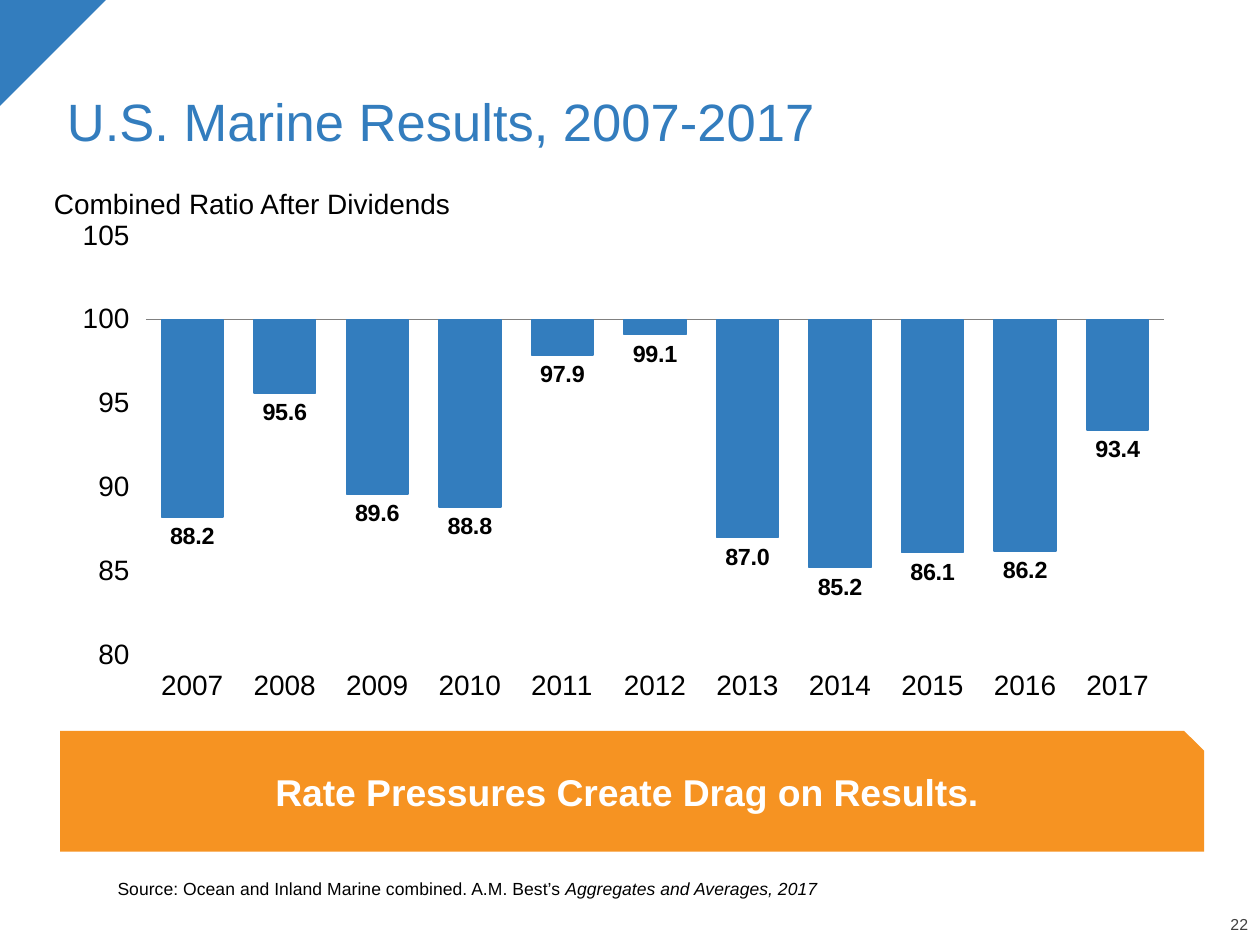
from dataclasses import dataclass

from lxml.etree import SubElement
from pptx import Presentation
from pptx.chart.data import CategoryChartData as Data
from pptx.dml.color import RGBColor
from pptx.enum.chart import XL_CHART_TYPE as Kind, XL_LABEL_POSITION as Spot
from pptx.enum.chart import XL_TICK_LABEL_POSITION as Place, XL_TICK_MARK as Tick
from pptx.enum.shapes import MSO_SHAPE as Form
from pptx.enum.text import MSO_ANCHOR as Anchor, PP_ALIGN as Align
from pptx.oxml.ns import qn
from pptx.util import Inches, Length, Pt

FONT = "Arial"
COLS, ROWS = 75, 56.25
CELL = Inches(0.1)
HUES = {"blue": "337DBE", "orange": "F69322", "black": "000000",
        "white": "FFFFFF", "grey": "404040", "axis": "808080"}
RATIOS = [88.2, 95.6, 89.6, 88.8, 97.9, 99.1, 87, 85.2, 86.1, 86.2, 93.4]
YEARS = [str(2007 + i) for i in range(len(RATIOS))]
PLOT = {"x": 8.7, "y": 6, "w": 89.5, "h": 77.8}


@dataclass(frozen=True)
class Box:
    col: float
    row: float
    wide: float
    high: float

    def place(self) -> list[Length]:
        return [Length(round(n * CELL)) for n in (self.col, self.row, self.wide, self.high)]


@dataclass(frozen=True)
class Label:
    box: Box
    text: str
    size: float
    hue: str = "black"
    tail: str = ""
    bold: bool = False
    align: Align = Align.LEFT
    anchor: Anchor = Anchor.TOP
    inset: tuple = (0.1, 0.05, 0.1, 0.05)
    lead: float = 0.9


@dataclass(frozen=True)
class Panel:
    box: Box
    form: Form
    hue: str
    turn: float = 0


CORNER = Panel(Box(0, 0, 6.3, 6.3), Form.RIGHT_TRIANGLE, "blue", 90)
BANNER = Panel(Box(3.58, 43.5, 68.1, 7.2), Form.SNIP_1_RECTANGLE, "orange")
CHART = Box(2.8, 12.1, 67.7, 32.1)
FLAT = (0, 0, 0, 0)
LABELS = [
    Label(Box(70.7, 54.6, 3.6, 1), "22", 6.8, "grey", align=Align.RIGHT,
          anchor=Anchor.BOTTOM, inset=FLAT),
    Label(Box(3, 1.8, 71, 7.8), "U.S. Marine Results, 2007-2017", 22.5, "blue",
          anchor=Anchor.BOTTOM),
    Label(Box(2.23, 10.84, 26.7, 4.1), "Combined Ratio After Dividends", 12),
    Label(Box(7, 51.3, 63, 3.4),
          "Source: Ocean and Inland Marine combined. A.M. Best’s ", 7.5,
          tail="Aggregates and Averages, 2017", anchor=Anchor.MIDDLE, inset=FLAT),
]
CLAIM = Label(BANNER.box, "Rate Pressures Create Drag on Results.", 16, "white",
              bold=True, align=Align.CENTER, anchor=Anchor.MIDDLE,
              inset=(0.07, 0.04, 0.07, 0.07), lead=0.95)


def tint(hue: str) -> RGBColor:
    return RGBColor.from_string(HUES[hue])


def style(font, size: float, hue: str = "black", bold: bool = False) -> None:
    font.name, font.size, font.bold = FONT, Pt(size), bold
    font.color.rgb = tint(hue)


def write(frame, label: Label) -> None:
    frame.word_wrap = True
    frame.vertical_anchor = label.anchor
    (frame.margin_left, frame.margin_top,
     frame.margin_right, frame.margin_bottom) = map(Inches, label.inset)
    frame.text = label.text
    para = frame.paragraphs[0]
    para.alignment, para.line_spacing = label.align, label.lead
    if label.tail:
        run = para.add_run()
        run.text = label.tail
        run.font.italic = True
    for run in para.runs:
        style(run.font, label.size, label.hue, label.bold)


def draw(shapes, panel: Panel):
    shape = shapes.add_shape(panel.form, *panel.box.place())
    shape.shadow.inherit = False
    shape.rotation = panel.turn
    shape.fill.solid()
    shape.fill.fore_color.rgb = tint(panel.hue)
    shape.line.fill.background()
    return shape


def frame_plot(chart) -> None:
    area = chart.plots[0]._element.getparent()
    layout = area.find(qn("c:layout"))
    if layout is None:
        layout = SubElement(area, qn("c:layout"))
        area.insert(0, layout)
    manual = SubElement(layout, qn("c:manualLayout"))
    shares = {tag: round(part / 100, 3) for tag, part in PLOT.items()}
    rules = {"layoutTarget": "inner", "xMode": "edge", "yMode": "edge", **shares}
    for tag, val in rules.items():
        SubElement(manual, qn(f"c:{tag}")).set("val", str(val))


def graph(shapes) -> None:
    data = Data(number_format="0.0")
    data.categories = YEARS
    data.add_series("Series 1", RATIOS)
    chart = shapes.add_chart(Kind.COLUMN_CLUSTERED, *CHART.place(), data).chart
    chart.has_legend = chart.has_title = False
    style(chart.font, 14)
    frame_plot(chart)

    years, scale = chart.category_axis, chart.value_axis
    for axis in (years, scale):
        axis.has_major_gridlines = False
        axis.minor_tick_mark = Tick.NONE
        style(axis.tick_labels.font, 12)
    years.major_tick_mark = Tick.NONE
    years.tick_label_position = Place.LOW
    years.format.line.color.rgb = tint("axis")
    years.format.line.width = Pt(0.75)
    scale.major_tick_mark = Tick.OUTSIDE
    scale.minimum_scale, scale.maximum_scale, scale.major_unit = 80, 105, 5
    scale.crosses_at = 100
    scale.format.line.fill.background()
    scale.tick_labels.number_format = "0"
    scale.tick_labels.number_format_is_linked = False

    plot = chart.plots[0]
    plot.gap_width, plot.vary_by_categories = 50, False
    bars = plot.series[0]
    bars.invert_if_negative = False
    bars.format.fill.solid()
    bars.format.fill.fore_color.rgb = tint("blue")
    bars.format.line.color.rgb = tint("blue")
    bars.format.line.width = Pt(0.75)
    marks = bars.data_labels
    marks.show_value, marks.position = True, Spot.OUTSIDE_END
    marks.number_format, marks.number_format_is_linked = "#,##0.0", False
    style(marks.font, 10, bold=True)


def main() -> None:
    deck = Presentation()
    deck.slide_width, deck.slide_height = round(COLS * CELL), round(ROWS * CELL)
    shapes = deck.slides.add_slide(deck.slide_layouts[6]).shapes
    draw(shapes, CORNER)
    for label in LABELS:
        write(shapes.add_textbox(*label.box.place()).text_frame, label)
    graph(shapes)
    write(draw(shapes, BANNER).text_frame, CLAIM)
    deck.save("out.pptx")


if __name__ == "__main__":
    main()
